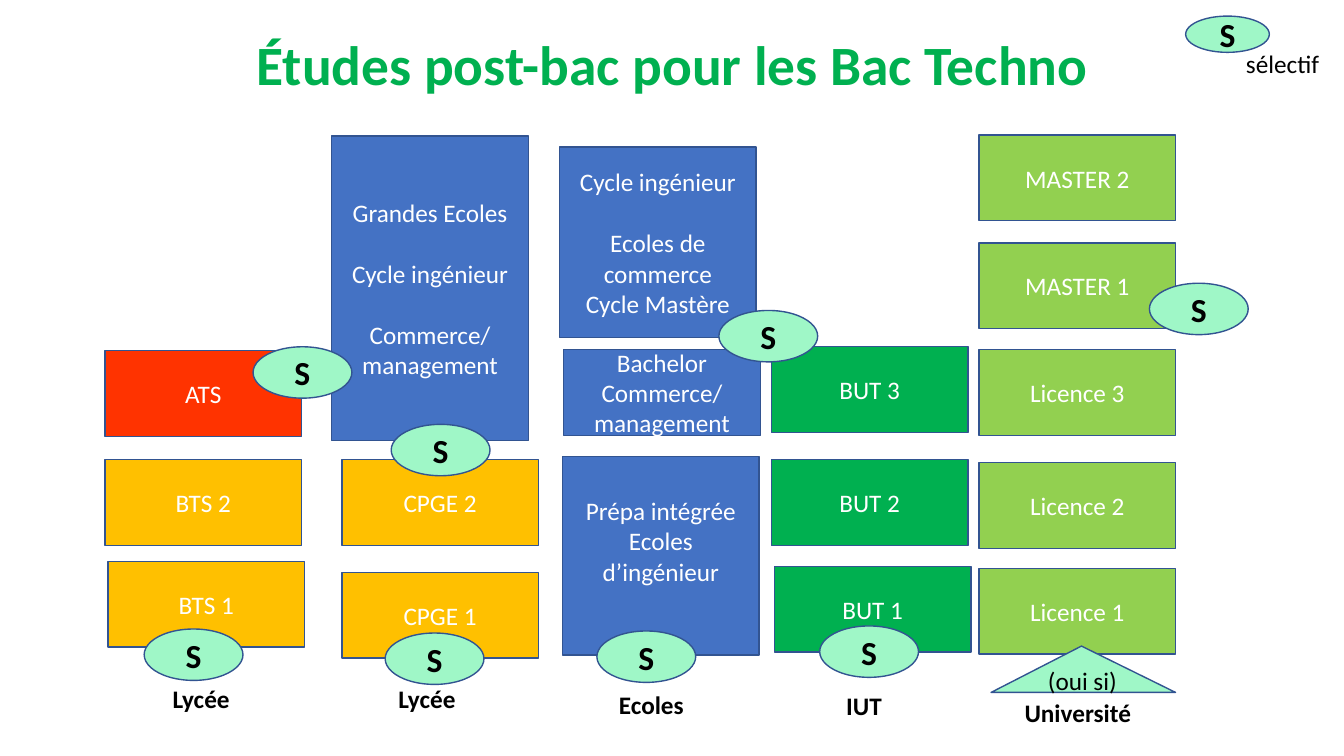
from collections import namedtuple
from dataclasses import dataclass, field

from pptx import Presentation
from pptx import util as u
from pptx.dml import color
from pptx.enum import shapes, text


@dataclass(frozen=True)
class Theme:
    """Colours, type sizes and standard part sizes of the slide."""
    font: str = "Calibri"
    white: str = "FFFFFF"
    black: str = "000000"
    outline: str = "325491"
    red: str = "FF3300"
    amber: str = "FFC000"
    blue: str = "4472C4"
    green: str = "00B050"
    lime: str = "92D050"
    mint: str = "9FF7C7"
    title_size: float = 39.6
    badge_size: float = 24
    body_size: float = 18
    group_gap: float = 22
    line_width: float = 1
    block: tuple = field(default=(1.95, 0.85))
    badge: tuple = field(default=(0.98, 0.51))
    label_height: float = 0.4


T = Theme()
SHAPE = shapes.MSO_SHAPE
Box = namedtuple("Box", "left top width height")
Block = namedtuple("Block", "dx dy words height bottom_inset", defaults=(T.block[1], 0.05))
Label = namedtuple("Label", "words dx dy width")
Path = namedtuple("Path", "left fills blocks label badges")

TOP = 1.34
PATHS = [
    Path(1.04, [T.red, T.amber, T.amber],
         [Block(0, 2.14, ["ATS"]), Block(0, 3.22, ["BTS 2"]), Block(0.03, 4.23, ["BTS 1"])],
         Label("Lycée", 0.57, 5.39, 0.77), [(0.39, 4.9)]),
    Path(3.29, [T.blue, T.amber, T.amber],
         [Block(0, 0.01, ["Grandes Ecoles", "Cycle ingénieur", "Commerce/\nmanagement"], 3.02),
          Block(0.1, 3.22, ["CPGE 2"]), Block(0.1, 4.34, ["CPGE 1"])],
         Label("Lycée", 0.56, 5.39, 0.77), [(-0.78, 2.1), (0.59, 2.87), (0.53, 4.94)]),
    Path(5.55, [T.blue] * 3,
         [Block(0, 0.12, ["Cycle ingénieur", "Ecoles de commerce\nCycle Mastère"], 1.89),
          Block(0.04, 2.13, ["Bachelor\nCommerce/\nmanagement"]),
          Block(0.03, 3.19, ["Prépa intégrée\nEcoles d’ingénieur"], 1.97, 0.35)],
         Label("Ecoles", 0.49, 5.45, 0.84), [(0.37, 4.92)]),
    Path(7.65, [T.green] * 3,
         [Block(0, 2.1, ["BUT 3"]), Block(0, 3.22, ["BUT 2"]), Block(0.03, 4.28, ["BUT 1"])],
         Label("IUT", -0.03, 5.46, 1.9), [(-0.52, 1.74), (0.48, 4.87)]),
    Path(9.71, [T.lime] * 5,
         [Block(0, 0, ["MASTER 2"]), Block(0, 1.07, ["MASTER 1"]), Block(0, 2.13, ["Licence 3"]),
          Block(0, 3.25, ["Licence 2"]), Block(0, 4.3, ["Licence 1"])],
         Label("Université", -0.09, 5.53, 2.14), [(1.69, 1.47)]),
]


def inches(box):
    """Turn a box into four lengths."""
    return [u.Inches(n) for n in box]


def add_text(tf, groups, size, ink, bold=False, align=text.PP_ALIGN.CENTER):
    """Write groups of lines, with a gap before every group but the first."""
    p = tf.paragraphs[0]
    for g, group in enumerate(groups):
        for n, line in enumerate(group.split("\n")):
            if g or n:
                p = tf.add_paragraph()
            if g and n == 0:
                p.space_before = u.Pt(T.group_gap)
            p.alignment = align
            r = p.add_run()
            r.text = line
            r.font.name = T.font
            r.font.size = u.Pt(size)
            r.font.bold = bold
            r.font.color.rgb = color.RGBColor.from_string(ink)


def add_figure(s, kind, box, fill, groups, size, ink, bold=False):
    """Add an outlined shape with centred text."""
    sp = s.shapes.add_shape(kind, *inches(box))
    sp.shadow.inherit = False
    sp.fill.solid()
    sp.fill.fore_color.rgb = color.RGBColor.from_string(fill)
    sp.line.color.rgb = color.RGBColor.from_string(T.outline)
    sp.line.width = u.Pt(T.line_width)
    sp.text_frame.vertical_anchor = text.MSO_ANCHOR.MIDDLE
    add_text(sp.text_frame, groups, size, ink, bold)
    return sp


def add_label(s, box, words, bold=True, align=text.PP_ALIGN.CENTER):
    """Add a one-line caption."""
    tf = s.shapes.add_textbox(*inches(box)).text_frame
    tf.word_wrap = box.width > 1
    add_text(tf, [words], T.body_size, T.black, bold, align)


def add_badge(s, box):
    """Add the oval that marks a selective entry."""
    add_figure(s, SHAPE.OVAL, box, T.mint, ["S"], T.badge_size, T.black, True)


def add_title(s, box, words):
    """Place and format the slide title."""
    sp = s.shapes.title
    sp.left, sp.top, sp.width, sp.height = inches(box)
    tf = sp.text_frame
    tf.vertical_anchor = text.MSO_ANCHOR.MIDDLE
    add_text(tf, [words], T.title_size, T.green, True)
    tf.paragraphs[0].line_spacing = 0.9


def add_path(s, left, top, path):
    """Build one column of studies with its caption and badges."""
    for block, fill in zip(path.blocks, path.fills):
        box = Box(left + block.dx, top + block.dy, T.block[0], block.height)
        sp = add_figure(s, SHAPE.RECTANGLE, box, fill, block.words, T.body_size, T.white)
        sp.text_frame.margin_bottom = u.Inches(block.bottom_inset)
    label = path.label
    add_label(s, Box(left + label.dx, top + label.dy, label.width, T.label_height), label.words)
    for dx, dy in path.badges:
        add_badge(s, Box(left + dx, top + dy, *T.badge))


def add_condition(s, box):
    """Add the triangle that marks conditional entry to university."""
    sp = add_figure(s, SHAPE.ISOSCELES_TRIANGLE, box, T.mint, ["(oui si)"], T.body_size, T.black)
    sp.adjustments[0] = 0.49


def add_legend(s, box):
    """Explain the badge in the corner."""
    add_badge(s, Box(box.left, box.top, 0.83, 0.36))
    add_label(s, Box(box.left + 0.5, box.top + 0.27, box.width - 0.5, T.label_height),
              "sélectif", False, text.PP_ALIGN.LEFT)


def main():
    """Build and save the slide."""
    prs = Presentation()
    prs.slide_width, prs.slide_height = u.Inches(13.33), u.Inches(7.5)
    s = prs.slides.add_slide(prs.slide_layouts[5])
    add_title(s, Box(0.92, 0.31, 11.5, 0.73), "Études post-bac pour les Bac Techno")
    for path in PATHS:
        add_path(s, path.left, TOP, path)
    add_condition(s, Box(9.83, 6.41, 1.83, 0.46))
    add_legend(s, Box(11.76, 0.16, 1.74, 0.67))
    prs.save("out.pptx")


if __name__ == "__main__":
    main()
